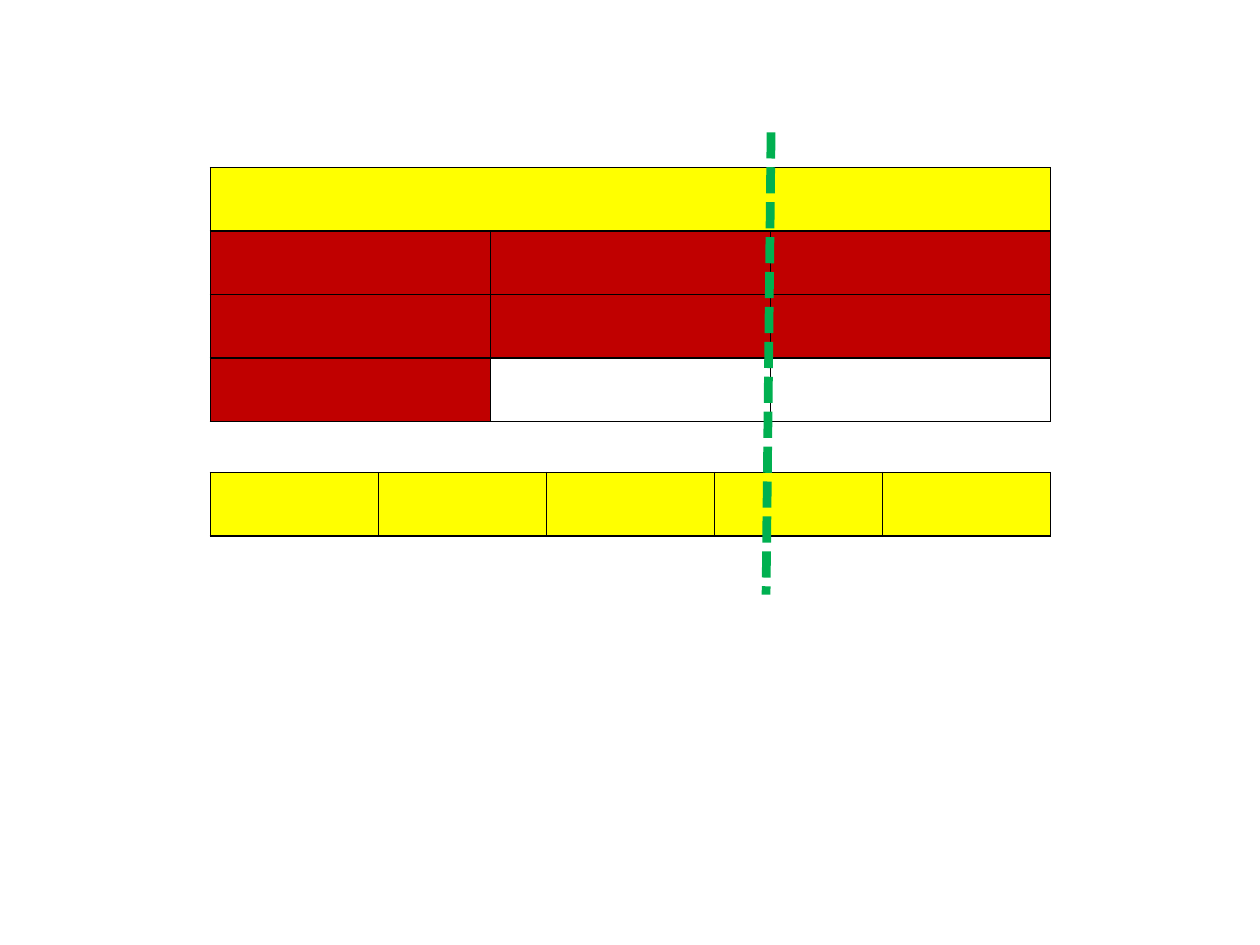
from dataclasses import dataclass
from typing import Optional

from lxml import etree
from pptx import Presentation
from pptx.dml.color import RGBColor
from pptx.enum.dml import MSO_LINE
from pptx.enum.shapes import MSO_CONNECTOR
from pptx.oxml.ns import qn
from pptx.util import Inches, Pt

STRAIGHT = MSO_CONNECTOR.STRAIGHT
SHORT_DASH = MSO_LINE.SQUARE_DOT

YELLOW = RGBColor(0xFF, 0xFF, 0x00)
RED = RGBColor(0xC0, 0x00, 0x00)
GREEN = RGBColor(0x00, 0xB0, 0x50)
BLACK = RGBColor(0x00, 0x00, 0x00)

LEFT, TOP, WIDTH, HEIGHT = 1.67, 1.33, 6.67, 2.92
GAP_HEIGHT = 0.4
# Fifteenths of the width, cut wherever a third or a fifth ends
COLUMN_UNITS = (3, 2, 1, 3, 1, 2, 3)
WHOLE = (7,)
THIRDS = (2, 3, 2)
FIFTHS = (1, 2, 1, 2, 1)


@dataclass(frozen=True)
class BarRow:
    spans: tuple[int, ...]
    fills: tuple[Optional[RGBColor], ...]
    is_gap: bool = False


ROWS = (
    BarRow(WHOLE, (YELLOW,)),
    BarRow(THIRDS, (RED,) * 3),
    BarRow(THIRDS, (RED,) * 3),
    BarRow(THIRDS, (RED, None, None)),
    BarRow(WHOLE, (None,), is_gap=True),
    BarRow(FIFTHS, (YELLOW,) * 5),
)


def set_borders(cell, visible_sides: str, hidden_sides: str = "") -> None:
    """Draw the sides named by the letters L, R, T and B, and clear the hidden ones."""
    properties = cell._tc.get_or_add_tcPr()
    for side in "LRTB":
        if side in visible_sides:
            border = etree.SubElement(properties, qn(f"a:ln{side}"), w=str(Pt(1)))
            fill = etree.SubElement(border, qn("a:solidFill"))
            etree.SubElement(fill, qn("a:srgbClr"), val=str(BLACK))
        elif side in hidden_sides:
            border = etree.SubElement(properties, qn(f"a:ln{side}"), w="0")
            etree.SubElement(border, qn("a:noFill"))


def fill_cell(cell, color: Optional[RGBColor]) -> None:
    if color is None:
        cell.fill.background()
    else:
        cell.fill.solid()
        cell.fill.fore_color.rgb = color


def draw_row(table, row_index: int, row: BarRow) -> None:
    start = 0
    for span, color in zip(row.spans, row.fills):
        last = start + span - 1
        if span > 1:
            table.cell(row_index, start).merge(table.cell(row_index, last))
        for column in range(start, last + 1):
            cell = table.cell(row_index, column)
            if row.is_gap:
                set_borders(cell, "TB", "LR")
            elif column == start:
                set_borders(cell, "LRTB")
            else:
                set_borders(cell, "RTB" if column == last else "TB")
            fill_cell(cell, color)
        start = last + 1


def draw_bars(slide) -> None:
    table = slide.shapes.add_table(
        len(ROWS), len(COLUMN_UNITS),
        Inches(LEFT), Inches(TOP), Inches(WIDTH), Inches(HEIGHT),
    ).table
    for setting, value in {"first_row": False, "horz_banding": False}.items():
        setattr(table, setting, value)
    for column, units in zip(table.columns, COLUMN_UNITS):
        column.width = Inches(WIDTH * units / sum(COLUMN_UNITS))
    bar_height = (HEIGHT - GAP_HEIGHT) / (len(ROWS) - 1)
    for row_index, row in enumerate(ROWS):
        table.rows[row_index].height = Inches(GAP_HEIGHT if row.is_gap else bar_height)
        draw_row(table, row_index, row)


def draw_dashed_marker(slide) -> None:
    marker = slide.shapes.add_connector(
        STRAIGHT, Inches(6.12), Inches(1.05), Inches(6.08), Inches(4.72)
    )
    marker.line.color.rgb = GREEN
    for setting, value in {"width": Pt(5), "dash_style": SHORT_DASH}.items():
        setattr(marker.line, setting, value)
    etree.SubElement(marker._element.spPr, qn("a:effectLst"))


def main() -> None:
    presentation = Presentation()
    presentation.slide_width = Inches(10)
    presentation.slide_height = Inches(7.5)
    slide = presentation.slides.add_slide(presentation.slide_layouts[6])
    draw_bars(slide)
    draw_dashed_marker(slide)
    presentation.save("out.pptx")


if __name__ == "__main__":
    main()
